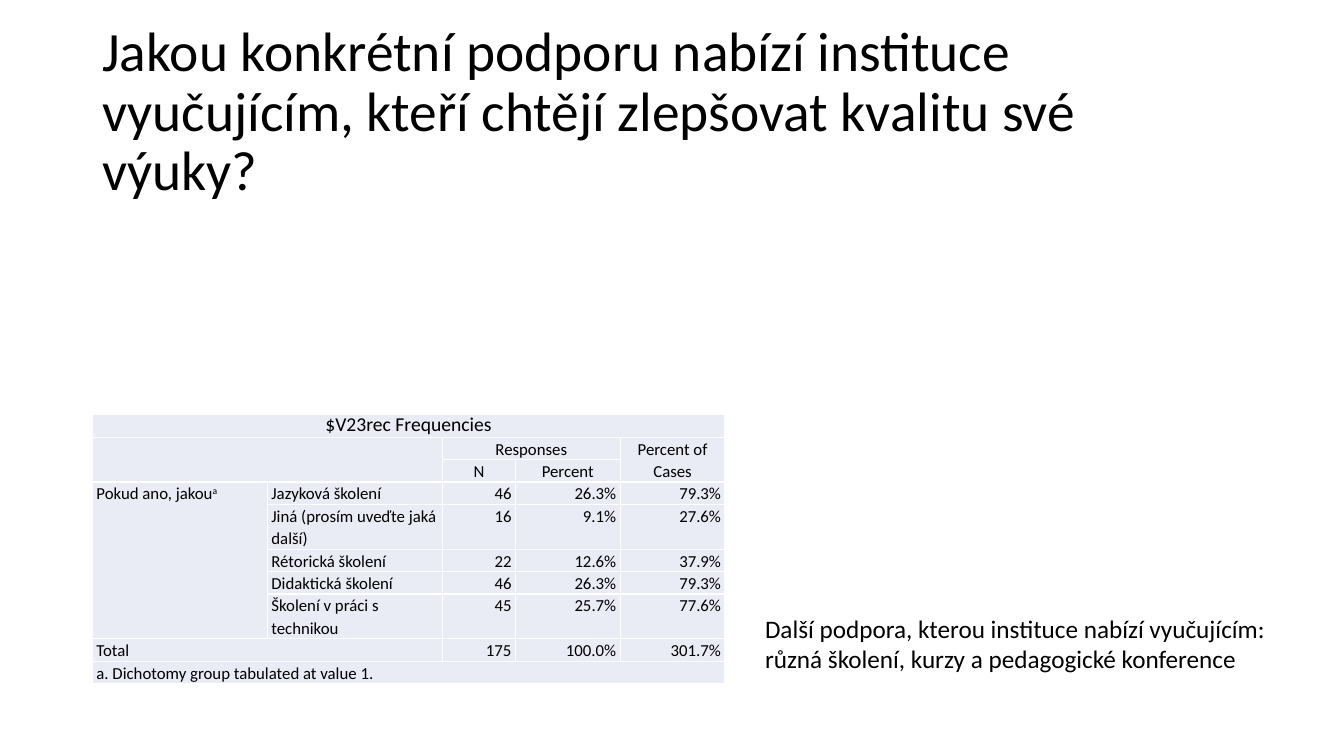
from lxml import etree
from pptx import Presentation
from pptx.dml.color import RGBColor
from pptx.enum.text import MSO_ANCHOR, PP_ALIGN
from pptx.oxml.ns import qn
from pptx.util import Cm, Pt

LEFT, CENTER, RIGHT = PP_ALIGN.LEFT, PP_ALIGN.CENTER, PP_ALIGN.RIGHT
TOP, MIDDLE, BOTTOM = MSO_ANCHOR.TOP, MSO_ANCHOR.MIDDLE, MSO_ANCHOR.BOTTOM

# Content
TITLE = ("Jakou konkrétní podporu nabízí instituce vyučujícím, "
         "kteří chtějí zlepšovat kvalitu své výuky?")
NOTE = ("Další podpora, kterou instituce nabízí vyučujícím: "
        "různá školení, kurzy a pedagogické konference")
ROWS = [
    ["$V23rec Frequencies", "", "", "", ""],
    ["", "", "Responses", "", "Percent of Cases"],
    ["", "", "N", "Percent", ""],
    ["Pokud ano, jakou", "Jazyková školení", "46", "26.3%", "79.3%"],
    ["", "Jiná (prosím uveďte jaká další)", "16", "9.1%", "27.6%"],
    ["", "Rétorická školení", "22", "12.6%", "37.9%"],
    ["", "Didaktická školení", "46", "26.3%", "79.3%"],
    ["", "Školení v práci s technikou", "45", "25.7%", "77.6%"],
    ["Total", "", "175", "100.0%", "301.7%"],
    ["a. Dichotomy group tabulated at value 1.", "", "", "", ""],
]
FOOTNOTE_MARKS = {(3, 0): "a"}
MERGES = [((0, 0), (0, 4)), ((1, 0), (2, 1)), ((1, 2), (1, 3)), ((1, 4), (2, 4)),
          ((3, 0), (7, 0)), ((8, 0), (8, 1)), ((9, 0), (9, 4))]
TWO_LINE_ROWS = {4, 7}
HEADER_ROWS = 3
COLUMN_WIDTHS = [4.41, 4.41, 1.84, 2.64, 2.64]
LINE_HEIGHT = 0.56

THEME = {
    "font": "Calibri",
    "text": RGBColor(0x00, 0x00, 0x00),
    "cell": RGBColor(0xE9, 0xEB, 0xF5),
    "border": "FFFFFF",
    "title": Pt(39.6), "note": Pt(18), "caption": Pt(14), "body": Pt(12),
    "leading": Pt(16), "indent": Cm(0.1), "border_width": Pt(1),
}


def add_run(paragraph, text, size):
    run = paragraph.add_run()
    run.text = text
    run.font.name = THEME["font"]
    run.font.size = size
    run.font.color.rgb = THEME["text"]
    return run


def add_text(slide, text, size, left, top, width, height, anchor=TOP):
    frame = slide.shapes.add_textbox(Cm(left), Cm(top), Cm(width), Cm(height)).text_frame
    frame.word_wrap = True
    frame.vertical_anchor = anchor
    add_run(frame.paragraphs[0], text, size)
    return frame.paragraphs[0]


def add_borders(cell):
    properties = cell._tc.get_or_add_tcPr()
    for position, side in enumerate(("lnL", "lnR", "lnT", "lnB")):
        line = etree.Element(qn("a:" + side), w=str(THEME["border_width"]))
        fill = etree.SubElement(line, qn("a:solidFill"))
        etree.SubElement(fill, qn("a:srgbClr"), val=THEME["border"])
        properties.insert(position, line)


def fill_cell(cell, row, column, text):
    cell.margin_left = cell.margin_right = cell.margin_top = cell.margin_bottom = 0
    cell.fill.solid()
    cell.fill.fore_color.rgb = THEME["cell"]
    add_borders(cell)

    is_header = row < HEADER_ROWS
    cell.vertical_anchor = MIDDLE if row == 0 else BOTTOM if is_header else TOP
    paragraph = cell.text_frame.paragraphs[0]
    paragraph.alignment = CENTER if is_header else RIGHT if column >= 2 else LEFT
    paragraph.line_spacing = THEME["leading"]
    properties = paragraph._p.get_or_add_pPr()
    for margin in ("marL", "marR"):
        properties.set(margin, str(THEME["indent"]))

    size = THEME["caption"] if row == 0 else THEME["body"]
    if text:
        add_run(paragraph, text, size)
    if (row, column) in FOOTNOTE_MARKS:
        mark = add_run(paragraph, FOOTNOTE_MARKS[row, column], size)
        mark.font._element.set("baseline", "30000")


def add_frequency_table(slide, left, top):
    heights = [LINE_HEIGHT * (2 if row in TWO_LINE_ROWS else 1) for row in range(len(ROWS))]
    table = slide.shapes.add_table(len(ROWS), len(COLUMN_WIDTHS), Cm(left), Cm(top),
                                   Cm(sum(COLUMN_WIDTHS)), Cm(sum(heights))).table
    table.first_row = table.horz_banding = False
    for column, width in zip(table.columns, COLUMN_WIDTHS):
        column.width = Cm(width)
    for row, height in zip(table.rows, heights):
        row.height = Cm(height)
    for row, texts in enumerate(ROWS):
        for column, text in enumerate(texts):
            fill_cell(table.cell(row, column), row, column, text)
    for first, last in MERGES:
        table.cell(*first).merge(table.cell(*last))


def main():
    presentation = Presentation()
    presentation.slide_width, presentation.slide_height = Cm(33.87), Cm(19.05)
    slide = presentation.slides.add_slide(presentation.slide_layouts[6])

    # Title
    title = add_text(slide, TITLE, THEME["title"], 2.33, 1.01, 29.21, 3.68, MIDDLE)
    title.line_spacing = 0.9

    # Frequencies and the remark beside them
    add_frequency_table(slide, 2.33, 10.45)
    add_text(slide, NOTE, THEME["note"], 19.03, 15.32, 14.05, 1.8)

    presentation.save("out.pptx")


if __name__ == "__main__":
    main()
